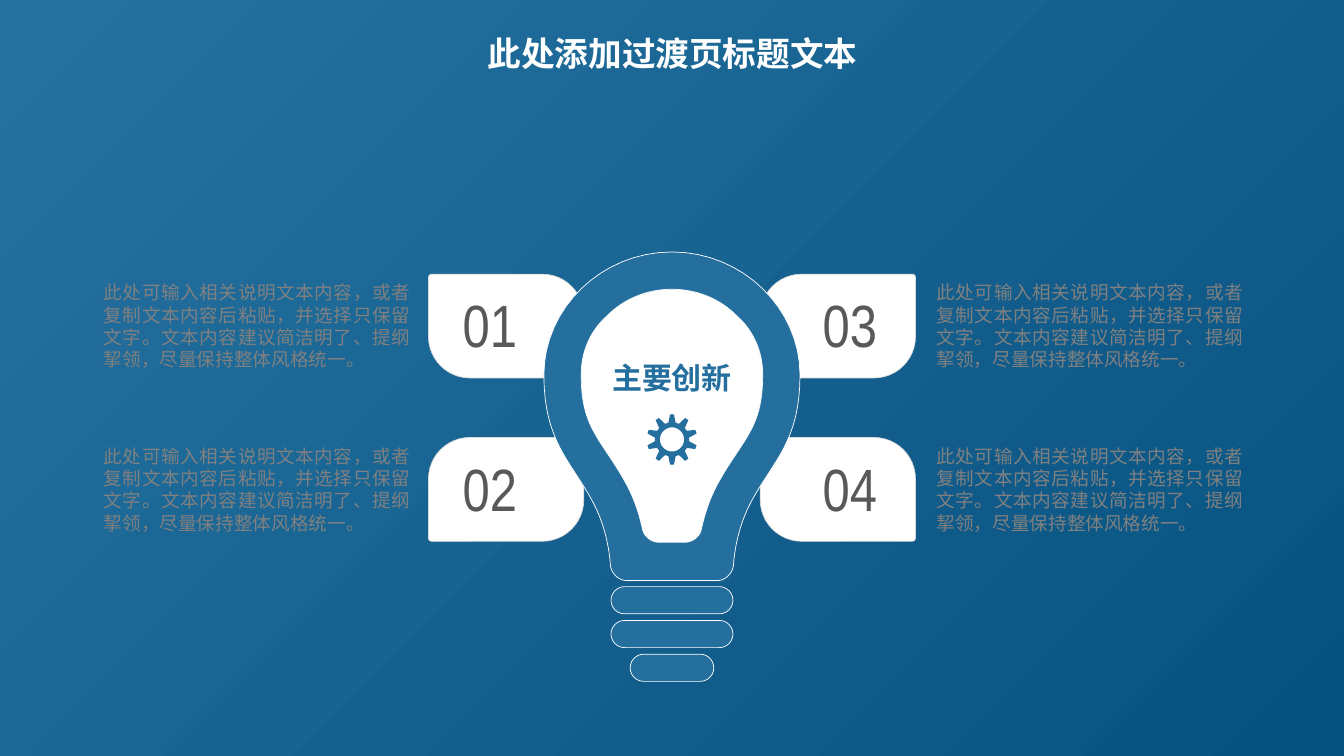
from dataclasses import dataclass
from math import cos, radians, sin

from lxml.etree import SubElement
from pptx import Presentation
from pptx.dml.color import RGBColor
from pptx.enum.shapes import MSO_SHAPE
from pptx.enum.text import MSO_AUTO_SIZE, PP_ALIGN
from pptx.oxml.ns import qn
from pptx.util import Inches, Pt


@dataclass(frozen=True)
class Theme:
    sky: str = "2671A0"
    deep: str = "065281"
    bulb: str = "246F9E"
    white: str = "FFFFFF"
    card_line: str = "D9D9D9"
    number: str = "595959"
    note: str = "808080"
    title_font: str = "Noto Sans CJK SC"
    label_font: str = "Arial Narrow"
    note_font: str = "Arial"
    title_size: float = 24
    number_size: float = 42.6
    label_size: float = 21.4
    note_size: float = 13.3


THEME = Theme()
WIDTH, HEIGHT = 13.33, 7.5
NOTE = "此处可输入相关说明文本内容，或者复制文本内容后粘贴，并选择只保留文字。文本内容建议简洁明了、提纲挈领，尽量保持整体风格统一。"

# Right half of each bulb outline: start, then Bezier triples, as (offset from axis, depth)
GLASS = [(0, 0),
         (0.7, 0), (1.27, 0.56), (1.27, 1.22),
         (1.27, 1.88), (1, 2.08), (0.79, 2.47),
         (0.66, 2.71), (0.62, 2.96), (0.61, 3.11),
         (0.6, 3.19), (0.53, 3.26), (0.45, 3.26)]
CORE = [(0, 0.37),
        (0.24, 0.37), (0.47, 0.46), (0.64, 0.63),
        (0.82, 0.79), (0.9, 1), (0.9, 1.22),
        (0.9, 1.61), (0.8, 1.76), (0.64, 2),
        (0.58, 2.09), (0.52, 2.18), (0.46, 2.29),
        (0.37, 2.45), (0.32, 2.62), (0.29, 2.76),
        (0.27, 2.83), (0.2, 2.88), (0.13, 2.88)]


def paint(sp, fill, line=None):
    sp.shadow.inherit = False
    sp.fill.solid()
    sp.fill.fore_color.rgb = RGBColor.from_string(fill)
    if line:
        sp.line.color.rgb = RGBColor.from_string(line)
        sp.line.width = Pt(0.5)
    else:
        sp.line.fill.background()


def add_text(s, box, text, font, size, color, align=PP_ALIGN.LEFT,
             bold=False, wrap=True, inset=True, spacing=None):
    tf = s.shapes.add_textbox(*map(Inches, box)).text_frame
    tf.word_wrap = wrap
    tf.auto_size = MSO_AUTO_SIZE.SHAPE_TO_FIT_TEXT
    if not inset:
        tf.margin_left = tf.margin_right = tf.margin_top = tf.margin_bottom = 0
    tf.text = text
    p = tf.paragraphs[0]
    p.alignment = align
    p.line_spacing = spacing
    r = p.runs[0]
    r.font.name, r.font.size, r.font.bold = font, Pt(size), bold
    r.font.color.rgb = RGBColor.from_string(color)
    SubElement(r.font._element, qn("a:ea")).set("typeface", font)


def add_outline(s, contours, fill, line=None):
    """Draw closed contours, given in inches, as one shape; later ones cut holes."""
    first, *holes = [[(Inches(x), Inches(y)) for x, y in contour]
                     for contour in contours]
    builder = s.shapes.build_freeform(*first[0])
    builder.add_line_segments(first[1:], close=True)
    for hole in holes:
        builder.move_to(*hole[0])
        builder.add_line_segments(hole[1:], close=True)
    paint(builder.convert_to_shape(), fill, line)


def mirrored_curve(half, axis, top, steps=16):
    """Trace a half outline and close it with its reflection."""
    points = [half[0]]
    for i in range(1, len(half), 3):
        a, (b, c, d) = points[-1], half[i:i + 3]
        for k in range(1, steps + 1):
            t = k / steps
            u = 1 - t
            points.append(tuple(
                u**3 * a[n] + 3 * u * u * t * b[n] + 3 * u * t * t * c[n] + t**3 * d[n]
                for n in (0, 1)))
    right = [(axis + x, top + y) for x, y in points]
    left = [(axis - x, top + y) for x, y in reversed(points[1:])]
    return right + left


def polar(cx, cy, radius, angle):
    return cx + radius * sin(radians(angle)), cy - radius * cos(radians(angle))


def add_background(s):
    fill = s.background.fill
    fill.gradient()
    fill.gradient_angle = 315
    for stop, color in zip(fill.gradient_stops, (THEME.sky, THEME.deep)):
        stop.color.rgb = RGBColor.from_string(color)


def add_card(s, box, number, number_left, note_left, round_top_left):
    left, top, width, height = box
    sp = s.shapes.add_shape(MSO_SHAPE.ROUND_2_DIAG_RECTANGLE, *map(Inches, box))
    corners = (0.4, 0.03) if round_top_left else (0.03, 0.4)
    sp.adjustments[0], sp.adjustments[1] = corners
    paint(sp, THEME.white, THEME.card_line)
    add_text(s, (left + number_left, top + 0.09, 0.82, 0.82), number,
             THEME.label_font, THEME.number_size, THEME.number, wrap=False)
    add_text(s, (left + note_left, top + 0.07, 3.04, 0.9), NOTE,
             THEME.note_font, THEME.note_size, THEME.note,
             PP_ALIGN.JUSTIFY, inset=False)


def add_gear(s, cx, cy, teeth=10):
    rim = []
    for i in range(teeth):
        middle = i * 360 / teeth
        rim += [polar(cx, cy, radius, middle + turn) for radius, turn in
                ((0.17, -12), (0.25, -4.5), (0.25, 4.5), (0.17, 12))]
    hole = [polar(cx, cy, 0.12, angle) for angle in range(0, 360, 10)]
    add_outline(s, [rim, hole], THEME.bulb)


def add_bulb(s, axis, top):
    # Glass and its bright core
    core = mirrored_curve(CORE, axis, top)
    add_outline(s, [core], THEME.white)
    add_outline(s, [mirrored_curve(GLASS, axis, top), core], THEME.bulb, THEME.white)
    # Screw base
    for i, width in enumerate((1.21, 1.21, 0.83)):
        sp = s.shapes.add_shape(
            MSO_SHAPE.ROUNDED_RECTANGLE, Inches(axis - width / 2),
            Inches(top + 3.32 + i * 0.67 / 2), Inches(width), Inches(0.27))
        sp.adjustments[0] = 0.5
        paint(sp, THEME.bulb, THEME.white)
    # Gear and label
    add_gear(s, axis, top + 1.86)
    add_text(s, (axis - 0.7, top + 0.84, 1.4, 0.57), "主要创新", THEME.label_font,
             THEME.label_size, THEME.bulb, PP_ALIGN.CENTER, bold=True,
             wrap=False, spacing=1.5)


def build_slide(prs):
    s = prs.slides.add_slide(prs.slide_layouts[6])
    add_background(s)
    # Cards: column by column, so the numbers run downwards
    for col, (left, number_left, note_left) in enumerate(
            ((4.25, 0.24, -3.22), (7.54, 0.52, 1.75))):
        for row, top in enumerate((2.72, 4.34)):
            add_card(s, (left, top, 1.54, 1.03), f"{col * 2 + row + 1:02}",
                     number_left, note_left, round_top_left=col != row)
    add_bulb(s, WIDTH / 2, 2.5)
    # Title
    add_text(s, (4.28, 0.28, 4.78, 0.5), "此处添加过渡页标题文本", THEME.title_font,
             THEME.title_size, THEME.white, PP_ALIGN.CENTER, bold=True)


def main():
    prs = Presentation()
    prs.slide_width, prs.slide_height = Inches(WIDTH), Inches(HEIGHT)
    build_slide(prs)
    prs.save("out.pptx")


if __name__ == "__main__":
    main()
